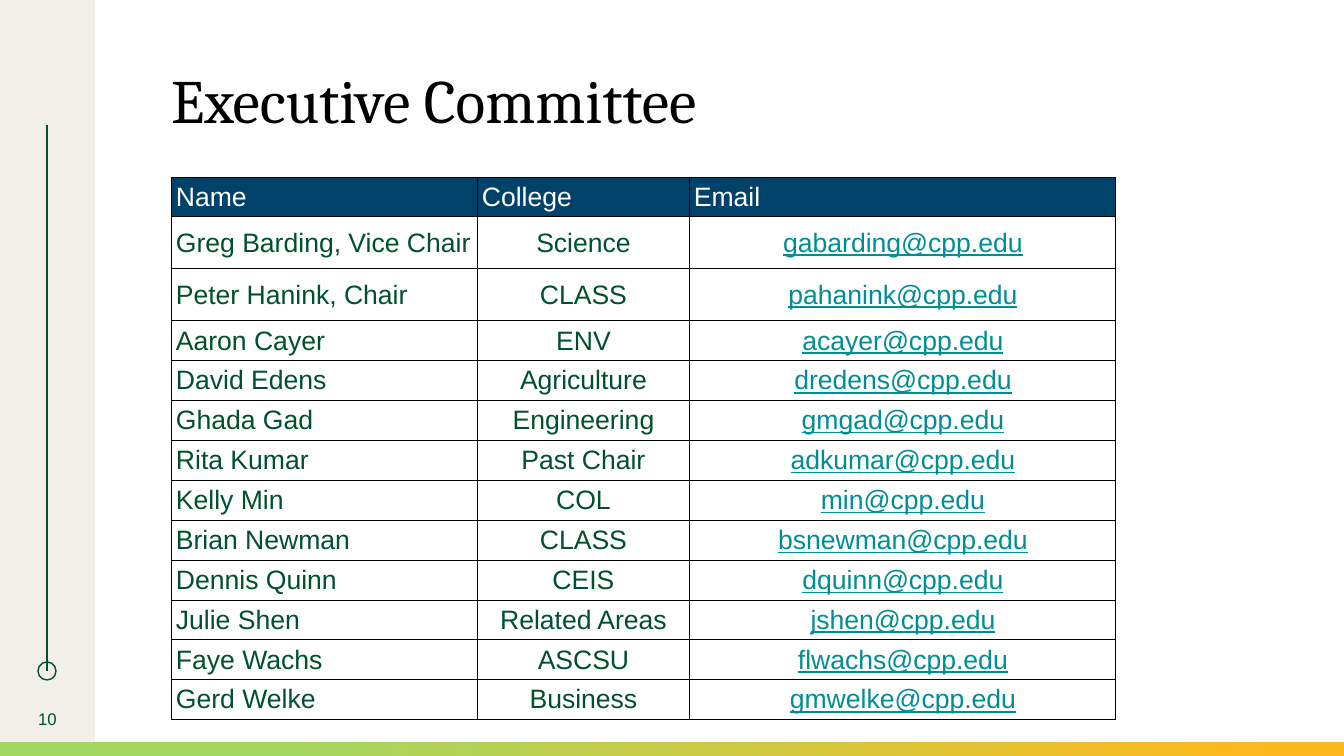
from lxml.etree import SubElement
from pptx import Presentation
from pptx.dml.color import RGBColor
from pptx.enum.shapes import MSO_CONNECTOR as CONNECTOR, MSO_SHAPE as SHAPE
from pptx.enum.text import MSO_ANCHOR as ANCHOR, PP_ALIGN as ALIGN
from pptx.oxml.ns import qn
from pptx.util import Emu, Pt

TITLE = "Executive Committee"
PAGE_NUMBER = "10"
HEADINGS = ("Name", "College", "Email")
MEMBERS = [
    ("Greg Barding, Vice Chair", "Science", "gabarding@cpp.edu"),
    ("Peter Hanink, Chair", "CLASS", "pahanink@cpp.edu"),
    ("Aaron Cayer", "ENV", "acayer@cpp.edu"),
    ("David Edens", "Agriculture", "dredens@cpp.edu"),
    ("Ghada Gad", "Engineering", "gmgad@cpp.edu"),
    ("Rita Kumar", "Past Chair", "adkumar@cpp.edu"),
    ("Kelly Min", "COL", "min@cpp.edu"),
    ("Brian Newman", "CLASS", "bsnewman@cpp.edu"),
    ("Dennis Quinn", "CEIS", "dquinn@cpp.edu"),
    ("Julie Shen", "Related Areas", "jshen@cpp.edu"),
    ("Faye Wachs", "ASCSU", "flwachs@cpp.edu"),
    ("Gerd Welke", "Business", "gmwelke@cpp.edu"),
]
COLORS = {
    "white": "FFFFFF", "black": "000000", "sidebar": "F2EEE9", "green": "005030",
    "navy": "01426A", "email": "008E95", "lime": "A3D65E", "gold": "FFB81C",
}
SCALE = 914400 / 100.8
SLIDE_W, SLIDE_H = 1344, 756
SIDEBAR_W = 95
RAIL_X, RAIL_TOP, RAIL_BOTTOM = 47, 125, 671
RING = 18
STRIPE_H = 14
TABLE_X, TABLE_Y, TABLE_BOTTOM = 171, 177, 712
COLUMNS = (306, 212, 427)
HEADER_H, CHAIR_H, CHAIRS = 39, 52, 2
INSETS = {"margin_left": 5, "margin_right": 4, "margin_top": 4, "margin_bottom": 4}


def px(value):
    return Emu(round(value * SCALE))


def rgb(name):
    return RGBColor.from_string(COLORS[name])


def set_all(target, values):
    for key, value in values.items():
        setattr(target, key, value)


def write(frame, text, color, align=ALIGN.LEFT, spacing=None, **font):
    paragraph = frame.paragraphs[0]
    set_all(paragraph, {"alignment": align, "line_spacing": spacing})
    run = paragraph.add_run()
    run.text = text
    set_all(run.font, font)
    run.font.color.rgb = rgb(color)


def add_shape(kind, *box):
    shape = slide.shapes.add_shape(kind, *map(px, box))
    shape.shadow.inherit = False
    shape.line.fill.background()
    return shape


def add_text(box, anchor, *content, **style):
    frame = slide.shapes.add_textbox(*map(px, box)).text_frame
    set_all(frame, {"word_wrap": True, "vertical_anchor": anchor, "margin_left": 0,
                    "margin_right": 0, "margin_top": 0, "margin_bottom": 0})
    write(frame, *content, **style)


def add_borders(cell):
    properties = cell._tc.get_or_add_tcPr()
    for side in ("a:lnL", "a:lnR", "a:lnT", "a:lnB"):
        border = SubElement(properties, qn(side), w=str(Pt(0.75)))
        fill = SubElement(border, qn("a:solidFill"))
        SubElement(fill, qn("a:srgbClr"), val=COLORS["black"])


prs = Presentation()
prs.slide_width, prs.slide_height = px(SLIDE_W), px(SLIDE_H)
slide = prs.slides.add_slide(prs.slide_layouts[6])

sidebar = add_shape(SHAPE.RECTANGLE, 0, 0, SIDEBAR_W, SLIDE_H)
sidebar.fill.solid()
sidebar.fill.fore_color.rgb = rgb("sidebar")

rail = slide.shapes.add_connector(
    CONNECTOR.STRAIGHT, *map(px, (RAIL_X, RAIL_TOP, RAIL_X, RAIL_BOTTOM)))
SubElement(rail._element.spPr, qn("a:effectLst"))
ring = add_shape(SHAPE.OVAL, RAIL_X - RING / 2, RAIL_BOTTOM - RING / 2, RING, RING)
ring.fill.background()
for outlined in (rail, ring):
    outlined.line.color.rgb = rgb("green")
    outlined.line.width = Pt(1)

stripe = add_shape(SHAPE.RECTANGLE, 0, SLIDE_H - STRIPE_H, SLIDE_W, STRIPE_H)
stripe.fill.gradient()
stripe.fill.gradient_angle = 0
for stop, (position, color) in zip(stripe.fill.gradient_stops,
                                   ((0.21, "lime"), (0.95, "gold"))):
    stop.position = position
    stop.color.rgb = rgb(color)

add_text((TABLE_X, 70, 740, 67), ANCHOR.TOP, TITLE, "black",
         spacing=0.9, name="Cambria", size=Pt(44))
add_text((0, 699, SIDEBAR_W, 40), ANCHOR.MIDDLE, PAGE_NUMBER, "green", ALIGN.CENTER,
         name="Arial", size=Pt(12))

rows = [HEADINGS, *MEMBERS]
plain_rows = len(MEMBERS) - CHAIRS
table_h = TABLE_BOTTOM - TABLE_Y
plain_h = (table_h - HEADER_H - CHAIRS * CHAIR_H) / plain_rows
heights = [HEADER_H] + [CHAIR_H] * CHAIRS + [plain_h] * plain_rows

table = slide.shapes.add_table(
    len(rows), len(COLUMNS),
    *map(px, (TABLE_X, TABLE_Y, sum(COLUMNS), table_h))).table
set_all(table, {"first_row": False, "horz_banding": False})
for column, width in zip(table.columns, COLUMNS):
    column.width = px(width)
for r, (entries, height) in enumerate(zip(rows, heights)):
    table.rows[r].height = px(height)
    for c, entry in enumerate(entries):
        cell = table.cell(r, c)
        header = r == 0
        email = c == 2 and not header
        set_all(cell, {key: px(inset) for key, inset in INSETS.items()})
        cell.vertical_anchor = ANCHOR.MIDDLE
        add_borders(cell)
        cell.fill.solid()
        cell.fill.fore_color.rgb = rgb("navy" if header else "white")
        color = "white" if header else "email" if email else "green"
        align = ALIGN.LEFT if header or c == 0 else ALIGN.CENTER
        write(cell.text_frame, entry, color, align,
              name="Arial", size=Pt(19), underline=email)

prs.save("out.pptx")
